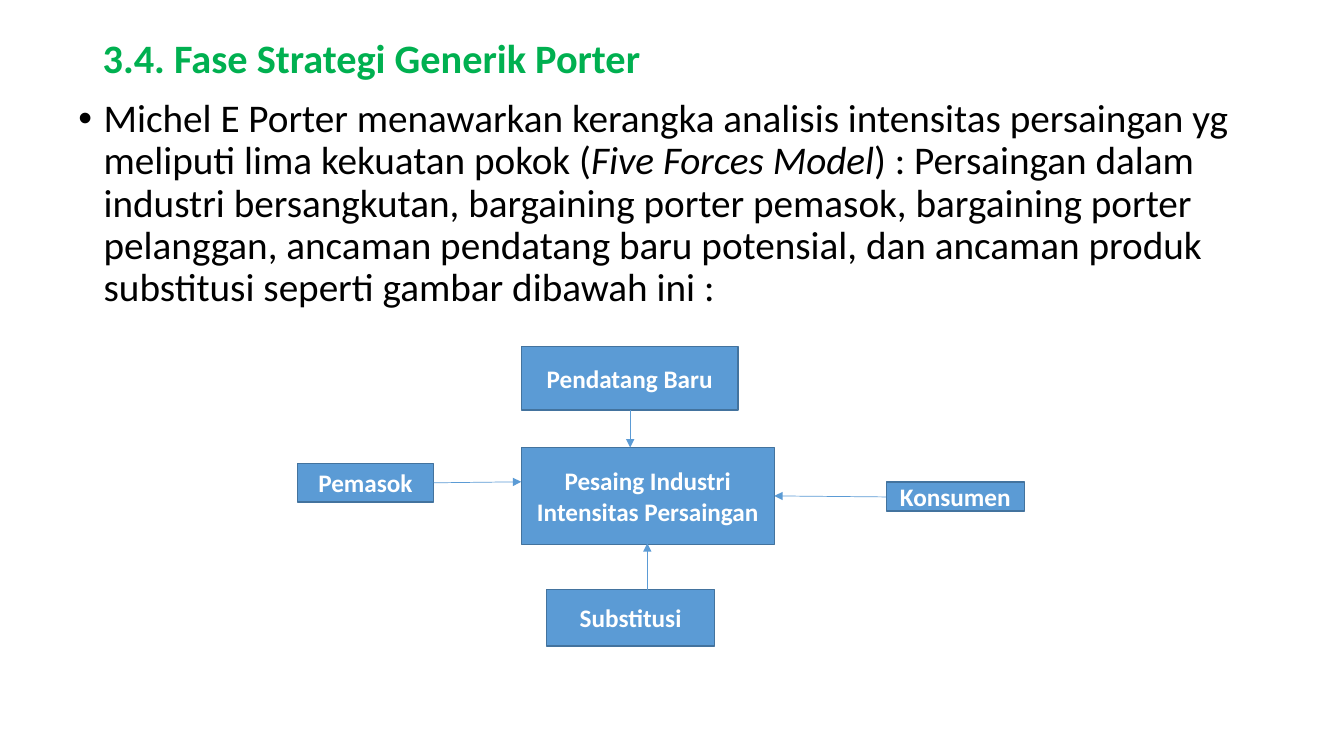
from dataclasses import dataclass

from lxml.etree import SubElement
from pptx import Presentation
from pptx.dml.color import RGBColor
from pptx.enum.shapes import MSO_CONNECTOR, MSO_SHAPE
from pptx.enum.text import MSO_ANCHOR, PP_ALIGN
from pptx.oxml.ns import qn
from pptx.slide import Slide
from pptx.text.text import TextFrame, _Paragraph
from pptx.util import Inches, Pt

GREEN = RGBColor(0x00, 0xB0, 0x50)
BLACK = RGBColor(0x00, 0x00, 0x00)
WHITE = RGBColor(0xFF, 0xFF, 0xFF)
BLUE = RGBColor(0x5B, 0x9B, 0xD5)
DARK_BLUE = RGBColor(0x43, 0x73, 0x9E)

TITLE_FONT = {"name": "Calibri", "size": Pt(28.8), "bold": True}
BODY_FONT = {"name": "Calibri", "size": Pt(28)}
FORCE_FONT = {"name": "Calibri", "size": Pt(18), "bold": True}


@dataclass
class Force:
    lines: list[str]
    left: float
    top: float
    width: float
    height: float


@dataclass
class Arrow:
    start: tuple[float, float]
    end: tuple[float, float]


FORCES = [
    Force(["Pendatang Baru"], 5.17, 3.44, 2.15, 0.63),
    Force(["Pesaing Industri", "Intensitas Persaingan"], 5.17, 4.44, 2.51, 0.96),
    Force(["Substitusi"], 5.42, 5.85, 1.67, 0.56),
    Force(["Konsumen"], 8.79, 4.78, 1.37, 0.29),
    Force(["Pemasok"], 2.95, 4.6, 1.35, 0.38),
]
ARROWS = [
    Arrow((6.25, 4.07), (6.25, 4.44)),
    Arrow((8.79, 4.93), (7.68, 4.92)),
    Arrow((6.42, 5.85), (6.42, 5.39)),
    Arrow((4.3, 4.79), (5.17, 4.78)),
]
BODY_SPANS = [
    ("Michel E Porter menawarkan kerangka analisis intensitas persaingan yg "
     "meliputi lima kekuatan pokok (", False),
    ("Five Forces Model", True),
    (") : Persaingan dalam industri bersangkutan, bargaining porter pemasok, "
     "bargaining porter pelanggan, ancaman pendatang baru potensial, dan ancaman "
     "produk substitusi seperti gambar dibawah ini :", False),
]


def add_span(para: _Paragraph, text: str, values: dict, color: RGBColor,
             italic: bool = False) -> None:
    span = para.add_run()
    span.text = text
    for name, value in {**values, "italic": italic}.items():
        setattr(span.font, name, value)
    span.font.color.rgb = color


def add_text_box(page: Slide, left: float, top: float, width: float,
                 height: float, anchor: MSO_ANCHOR) -> TextFrame:
    box = page.shapes.add_textbox(Inches(left), Inches(top), Inches(width), Inches(height))
    frame = box.text_frame
    frame.word_wrap = True
    frame.vertical_anchor = anchor
    frame.paragraphs[0].line_spacing = 0.9
    return frame


def add_bullet(para: _Paragraph, indent: float) -> None:
    properties = para._p.get_or_add_pPr()
    properties.set("marL", str(Inches(indent)))
    properties.set("indent", str(-Inches(indent)))
    SubElement(properties, qn("a:buFont")).set("typeface", "Arial")
    SubElement(properties, qn("a:buChar")).set("char", "•")


def add_force(page: Slide, force: Force) -> None:
    box = page.shapes.add_shape(
        MSO_SHAPE.RECTANGLE, Inches(force.left), Inches(force.top),
        Inches(force.width), Inches(force.height))
    box.shadow.inherit = False
    box.fill.solid()
    box.fill.fore_color.rgb = BLUE
    box.line.color.rgb = DARK_BLUE
    box.line.width = Pt(1)
    frame = box.text_frame
    frame.word_wrap = True
    frame.vertical_anchor = MSO_ANCHOR.MIDDLE
    for index, text in enumerate(force.lines):
        para = frame.add_paragraph() if index else frame.paragraphs[0]
        para.alignment = PP_ALIGN.CENTER
        add_span(para, text, FORCE_FONT, WHITE)


def add_arrow(page: Slide, arrow: Arrow) -> None:
    points = [Inches(length) for length in arrow.start + arrow.end]
    connector = page.shapes.add_connector(MSO_CONNECTOR.STRAIGHT, *points)
    connector.line.color.rgb = BLUE
    connector.line.width = Pt(0.5)
    SubElement(connector.line._get_or_add_ln(), qn("a:tailEnd")).set("type", "triangle")
    SubElement(connector._element.spPr, qn("a:effectLst"))


def main() -> None:
    deck = Presentation()
    deck.slide_width, deck.slide_height = Inches(13.33), Inches(7.5)
    page = deck.slides.add_slide(deck.slide_layouts[6])

    # Title
    title = add_text_box(page, 0.92, 0.4, 11.5, 0.39, MSO_ANCHOR.MIDDLE)
    add_span(title.paragraphs[0], "3.4. Fase Strategi Generik Porter", TITLE_FONT, GREEN)

    # Bulleted explanation
    body = add_text_box(page, 0.68, 0.93, 12.03, 6.08, MSO_ANCHOR.TOP)
    para = body.paragraphs[0]
    para.space_before = Pt(10)
    add_bullet(para, 0.25)
    for text, italic in BODY_SPANS:
        add_span(para, text, BODY_FONT, BLACK, italic)

    # Five forces diagram
    for force in FORCES:
        add_force(page, force)
    for arrow in ARROWS:
        add_arrow(page, arrow)

    deck.save("out.pptx")


if __name__ == "__main__":
    main()
